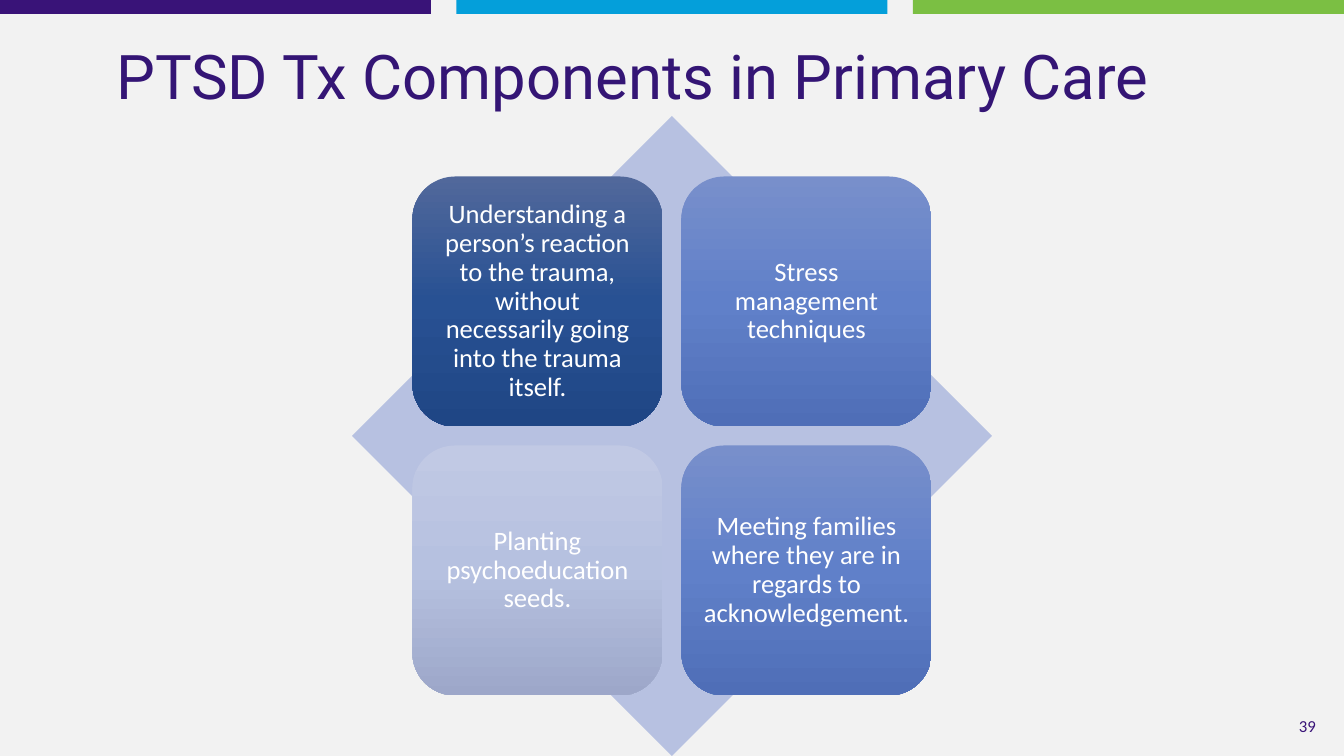
from copy import deepcopy

from pptx import Presentation
from pptx.dml.color import RGBColor
from pptx.enum.shapes import MSO_SHAPE as SHAPE
from pptx.enum.text import MSO_ANCHOR as ANCHOR, PP_ALIGN as ALIGN
from pptx.oxml.ns import qn
from pptx.util import Emu, Pt

SLIDE_W, SLIDE_H = 1344, 756
GREY, PURPLE, WHITE = "F2F2F2", "391378", "FFFFFF"
BAR_COLORS = [PURPLE, "049FDA", "7BBF43"]
NAVY = ["51689B", "285193", "1F4685"]
BLUE = ["788FCB", "6080C9", "4F6EB7"]
PALE = ["C1C9E4", "B6C1E0", "9DA7C9"]
TILES = [
    ("Understanding a person’s reaction to the trauma, "
     "without necessarily going into the trauma itself.", NAVY),
    ("Stress management techniques", BLUE),
    ("Planting psychoeducation seeds.", PALE),
    ("Meeting families where they are in regards to acknowledgement.", BLUE),
]


def px(n):
    return Emu(round(n * 914400 / 100.8))


def rgb(color):
    return RGBColor.from_string(color)


def add_shape(slide, kind, box, color):
    s = slide.shapes.add_shape(kind, *map(px, box))
    s.shadow.inherit = False
    s.line.fill.background()
    s.fill.solid()
    s.fill.fore_color.rgb = rgb(color)
    return s


def fill_gradient(s, colors):
    """Spread three colours evenly from top to bottom."""
    s.fill.gradient()
    s.fill.gradient_angle = 270
    stops = s._element.spPr.find(qn("a:gradFill")).find(qn("a:gsLst"))
    stops.insert(1, deepcopy(stops[0]))
    for i, (stop, color) in enumerate(zip(s.fill.gradient_stops, colors)):
        stop.position = i / 2
        stop.color.rgb = rgb(color)


def write(s, text, font, size, color, align=ALIGN.CENTER, spacing=0.9,
          inset=5, **frame):
    tf = s.text_frame
    margins = {f"margin_{side}": px(inset)
               for side in ("left", "top", "right", "bottom")}
    settings = {"word_wrap": True, "vertical_anchor": ANCHOR.MIDDLE}
    for name, value in {**settings, **margins, **frame}.items():
        setattr(tf, name, value)
    p = tf.paragraphs[0]
    p.alignment, p.line_spacing = align, spacing
    r = p.add_run()
    r.text = text
    for name, value in {"name": font, "size": Pt(size)}.items():
        setattr(r.font, name, value)
    r.font.color.rgb = rgb(color)


def add_top_bars(slide, x, y, w, h):
    bar_w = 431
    pitch = (w - bar_w) / (len(BAR_COLORS) - 1)
    for i, color in enumerate(BAR_COLORS):
        add_shape(slide, SHAPE.RECTANGLE, (x + i * pitch, y, bar_w, h), color)


def add_title(slide, x, y, w, h):
    s = slide.shapes.add_textbox(*map(px, (x, y, w, h)))
    write(s, "PTSD Tx Components in Primary Care", "Roboto", 44, "341575",
          margin_right=px(83))


def add_page_number(slide, x, y, w, h):
    s = slide.shapes.add_textbox(*map(px, (x, y, w, h)))
    write(s, "39", "Calibri", 12, PURPLE, align=ALIGN.RIGHT, spacing=1.0,
          word_wrap=False)


def add_matrix(slide, x, y, size):
    """Diamond with a two by two grid of tiles centred on it."""
    tile, gap = 250, 19
    margin = (size - 2 * tile - gap) / 2
    add_shape(slide, SHAPE.DIAMOND, (x, y, size, size), "B7C1E1")
    for i, (text, colors) in enumerate(TILES):
        row, col = divmod(i, 2)
        left = x + margin + col * (tile + gap)
        top = y + margin + row * (tile + gap)
        s = add_shape(slide, SHAPE.ROUNDED_RECTANGLE,
                      (left, top, tile, tile), colors[1])
        s.adjustments[0] = 0.17
        fill_gradient(s, colors)
        write(s, text, "Calibri", 19, WHITE, inset=8)


def main():
    prs = Presentation()
    prs.slide_width, prs.slide_height = px(SLIDE_W), px(SLIDE_H)
    slide = prs.slides.add_slide(prs.slide_layouts[6])
    slide.background.fill.solid()
    slide.background.fill.fore_color.rgb = rgb(GREY)
    add_top_bars(slide, 0, 0, SLIDE_W, 14)
    add_page_number(slide, 1293, 712, 28, 27)
    add_title(slide, 0, 14, SLIDE_W, 131)
    add_matrix(slide, 352, 116, 640)
    prs.save("out.pptx")


if __name__ == "__main__":
    main()
